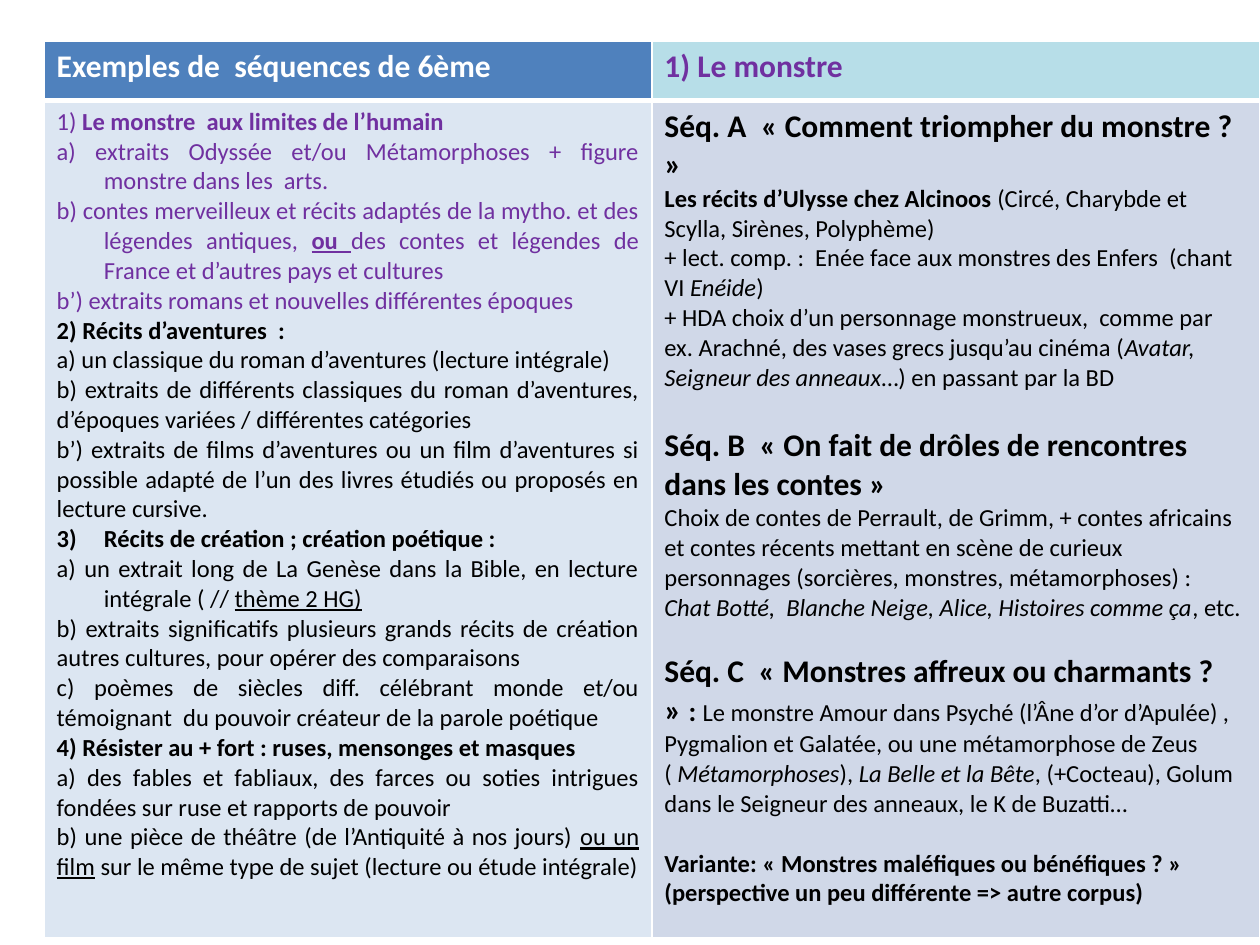
"""Build a slide with a two-column table of teaching sequences."""
from lxml import etree
from pptx import Presentation
from pptx.dml.color import RGBColor
from pptx.enum.text import PP_ALIGN
from pptx.oxml.ns import qn
from pptx.util import Cm, Pt

LEFT, JUST = PP_ALIGN.LEFT, PP_ALIGN.JUSTIFY
WHITE = RGBColor(0xFF, 0xFF, 0xFF)
BLACK = RGBColor(0, 0, 0)
PLUM = RGBColor(0x70, 0x30, 0xA0)
BLUE = RGBColor(0x4F, 0x81, 0xBD)
AQUA = RGBColor(0xB7, 0xDE, 0xE8)
PALE = RGBColor(0xDC, 0xE6, 0xF2)
GREY = RGBColor(0xD0, 0xD8, 0xE8)

BASE = {"name": "Calibri", "size": Pt(14), "bold": False}
STYLES = {
    "text": {},
    "bold": {"bold": True},
    "ital": {"italic": True},
    "line": {"underline": True},
    "both": {"bold": True, "underline": True},
    "mid": {"bold": True, "size": Pt(16)},
    "head": {"bold": True, "size": Pt(18)},
}

HANG = {"hang": True}
THEMES = [
    ([("1) ", "text"), ("Le monstre  aux limites de l’humain", "bold")], HANG),
    ([("a) extraits Odyssée et/ou Métamorphoses + figure monstre dans les  arts.",
       "text")], HANG),
    ([("b) contes merveilleux et récits adaptés de la mytho. et des légendes "
       "antiques, ", "text"), ("ou ", "both"),
      ("des contes et légendes de France et d’autres pays et cultures", "text")],
     HANG),
    ([("b’) extraits romans et nouvelles différentes époques", "text")], {}),
]
TALES = [
    ([("2) Récits d’aventures  :", "bold")], {}),
    ([("a) un classique du roman d’aventures (lecture intégrale)", "text")], {}),
    ([("b) extraits de différents classiques du roman d’aventures, d’époques "
       "variées / différentes catégories", "text")], {}),
    ([("b’) extraits de films d’aventures ou un film d’aventures si possible "
       "adapté de l’un des livres étudiés ou proposés en lecture cursive.",
       "text")], {}),
    ([("Récits de création ; création poétique :", "bold")],
     {"hang": True, "start": 3}),
    ([("a) un extrait long de La Genèse dans la Bible, en lecture intégrale ( // ",
       "text"), ("thème 2 HG)", "line")], HANG),
    ([("b) extraits significatifs plusieurs grands récits de création autres "
       "cultures, pour opérer des comparaisons", "text")], {}),
    ([("c) poèmes de siècles diff. célébrant monde et/ou témoignant  du pouvoir "
       "créateur de la parole poétique", "text")], {}),
    ([("4) Résister au + fort : ruses, mensonges et masques", "bold")], {}),
    ([("a) des fables et fabliaux, des farces ou soties intrigues fondées sur "
       "ruse et rapports de pouvoir", "text")], {}),
    ([("b) une pièce de théâtre (de l’Antiquité à nos jours) ", "text"),
      ("ou un film", "line"),
      (" sur le même type de sujet (lecture ou étude intégrale)", "text")], {}),
]
UNITS = [
    ([("Séq. A  « Comment triompher du monstre ? »", "head")], {}),
    ([("Les récits d’Ulysse chez Alcinoos ", "bold"),
      ("(Circé, Charybde et Scylla, Sirènes, Polyphème)", "text")], {}),
    ([("+ lect. comp. :  Enée face aux monstres des Enfers  (chant VI ", "text"),
      ("Enéide", "ital"), (")", "text")], {}),
    ([("+ HDA choix d’un personnage monstrueux,  comme par ex. Arachné, des "
       "vases grecs jusqu’au cinéma (", "text"),
      ("Avatar, Seigneur des anneaux", "ital"),
      ("…) en passant par la BD", "text")], {}),
    ([("Séq. B  « On fait de drôles de rencontres dans les contes »", "head")],
     {"gap": 19.5}),
    ([("Choix de contes de Perrault, de Grimm, + contes africains et contes "
       "récents mettant en scène de curieux personnages (sorcières, monstres, "
       "métamorphoses) :", "text")], {}),
    ([("Chat Botté,  Blanche Neige, Alice, Histoires comme ça", "ital"),
      (", etc.", "text")], {}),
    ([("Séq. C  « Monstres affreux ou charmants ? » ", "head"), (": ", "mid"),
      ("Le monstre Amour dans Psyché (l’Âne d’or d’Apulée) , Pygmalion et "
       "Galatée, ou une métamorphose de Zeus ( ", "text"),
      ("Métamorphoses", "ital"), ("), ", "text"),
      ("La Belle et la Bête", "ital"),
      (", (+Cocteau), Golum dans le Seigneur des anneaux, le K de Buzatti…",
       "text")], {"gap": 17}),
    ([("Variante: « Monstres maléfiques ou bénéfiques ? »", "bold")],
     {"gap": 17}),
    ([("(perspective un peu différente => autre corpus)", "bold")], {}),
]


def add_run(para, text, style, tint):
    """Add one run in a named style."""
    run = para.add_run()
    run.text = text
    for key, value in {**BASE, **STYLES[style]}.items():
        setattr(run.font, key, value)
    run.font.color.rgb = tint


def set_form(para, align, hang=False, start=None, gap=0):
    """Set alignment, space, hanging indent and number of a paragraph."""
    para.alignment = align
    if gap:
        para.space_before = Pt(gap)
    props = para._p.get_or_add_pPr()
    if hang:
        props.set("marL", str(Cm(0.95)))
        props.set("indent", str(-Cm(0.95)))
    if start:
        etree.SubElement(props, qn("a:buAutoNum"), type="arabicParenR",
                         startAt=str(start))


def add_edge(cell, side, width):
    """Draw one white border of a cell."""
    props = cell._tc.get_or_add_tcPr()
    edge = etree.SubElement(props, qn(f"a:ln{side}"), w=str(Pt(width)))
    fill = etree.SubElement(edge, qn("a:solidFill"))
    etree.SubElement(fill, qn("a:srgbClr"), val=str(WHITE))


def fill_cell(cell, fill, edges, align, parts):
    """Fill a cell with borders, colour and tinted paragraphs."""
    for side, width in zip("LRTB", edges):
        add_edge(cell, side, width)
    cell.fill.solid()
    cell.fill.fore_color.rgb = fill
    items = [(tint, item) for tint, group in parts for item in group]
    frame = cell.text_frame
    for index, (tint, (runs, form)) in enumerate(items):
        para = frame.add_paragraph() if index else frame.paragraphs[0]
        set_form(para, align, **form)
        for text, style in runs:
            add_run(para, text, style, tint)


def main():
    """Build and save the slide."""
    deck = Presentation()
    deck.slide_width, deck.slide_height = Cm(25.4), Cm(19.05)
    slide = deck.slides.add_slide(deck.slide_layouts[6])
    table = slide.shapes.add_table(
        2, 2, Cm(0.89), Cm(0.84), Cm(24.5), Cm(18.06)).table
    for row, height in zip(table.rows, (1.19, 16.87)):
        row.height = Cm(height)
    top, body = (1, 1, 1, 3), (1, 1, 3, 1)
    left = [([("Exemples de  séquences de 6ème", "head")], {})]
    right = [([("1) Le monstre", "head")], {})]
    fill_cell(table.cell(0, 0), BLUE, top, LEFT, [(WHITE, left)])
    fill_cell(table.cell(0, 1), AQUA, top, LEFT, [(PLUM, right)])
    fill_cell(table.cell(1, 0), PALE, body, JUST,
              [(PLUM, THEMES), (BLACK, TALES)])
    fill_cell(table.cell(1, 1), GREY, body, LEFT, [(BLACK, UNITS)])
    deck.save("out.pptx")


if __name__ == "__main__":
    main()
